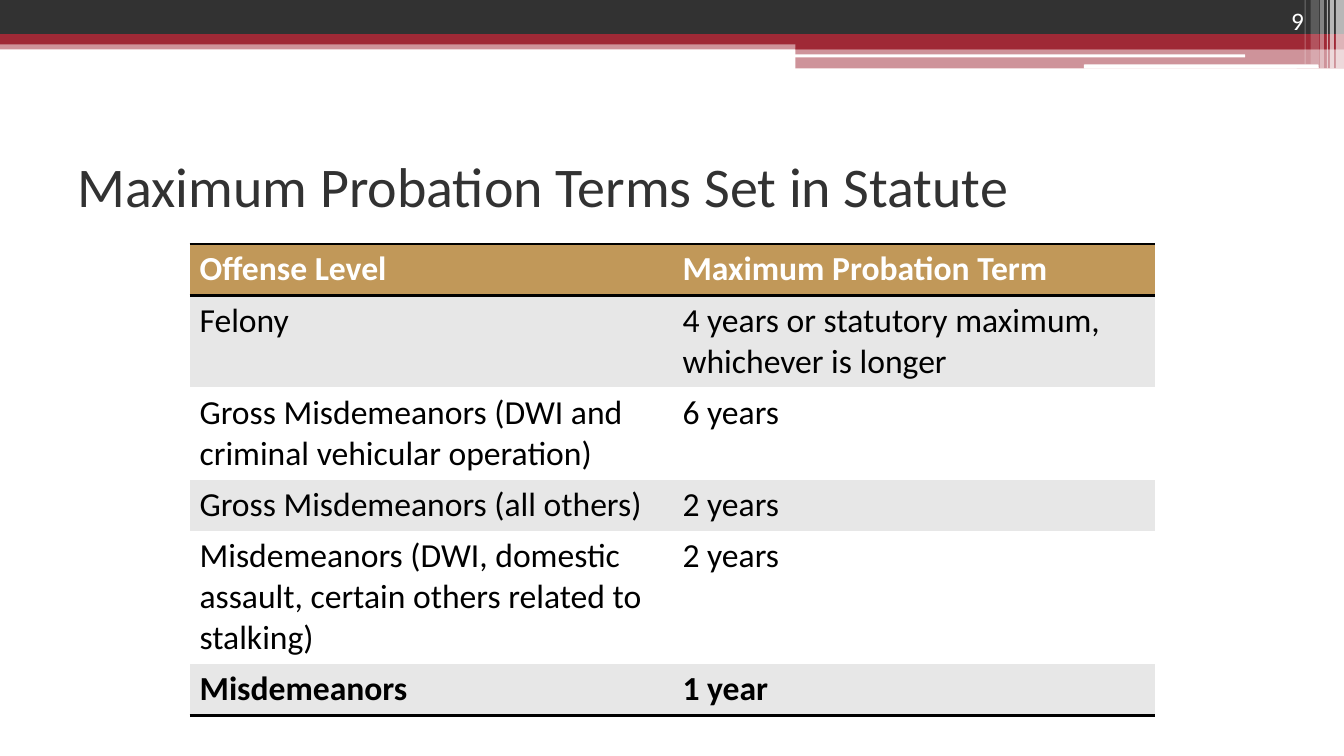
import dataclasses

import lxml.etree
import pptx
import pptx.dml.color
import pptx.enum.shapes
import pptx.enum.text
import pptx.oxml
import pptx.oxml.ns
import pptx.util

Inches = pptx.util.Inches
Pt = pptx.util.Pt
RGBColor = pptx.dml.color.RGBColor
Shape = pptx.enum.shapes.MSO_SHAPE
Anchor = pptx.enum.text.MSO_ANCHOR
qn = pptx.oxml.ns.qn

FONT = "Calibri"
WHITE = RGBColor(0xFF, 0xFF, 0xFF)
BLACK = RGBColor(0x00, 0x00, 0x00)
CHARCOAL = RGBColor(0x32, 0x32, 0x32)
CRIMSON = RGBColor(0x9F, 0x29, 0x36)
TAN = RGBColor(0xC1, 0x98, 0x59)
GRAY = RGBColor(0xE7, 0xE7, 0xE7)
PLAIN_TABLE_STYLE = "{2D5ABB26-0587-4C30-8999-92F81FD0307C}"


@dataclasses.dataclass(frozen=True)
class Band:
    left: float
    top: float
    width: float
    height: float
    color: RGBColor
    opacity: int = 100
    rounded: bool = False


@dataclasses.dataclass(frozen=True)
class TermRow:
    offense: str
    term: str
    height: float
    fill: RGBColor
    color: RGBColor = BLACK
    bold: bool = False
    borders: tuple[str, ...] = ()


BANDS = [
    # Full-width bars
    Band(0, 0.4, 13.33, 0.09, CRIMSON, 50),
    Band(0, 0, 13.33, 0.34, CHARCOAL),
    Band(0, 0.34, 13.33, 0.1, CRIMSON),
    # Stepped bars at the right
    Band(7.89, 0.39, 5.44, 0.1, CRIMSON),
    Band(7.89, 0.48, 5.44, 0.2, CRIMSON, 50),
    Band(7.88, 0.54, 4.47, 0.03, WHITE, rounded=True),
    Band(10.75, 0.64, 2.33, 0.04, WHITE, rounded=True),
    # Translucent vertical stripes
    Band(13.25, 0, 0.08, 0.68, WHITE, 65),
    Band(13.19, 0, 0.04, 0.68, WHITE, 65),
    Band(13.16, 0, 0.01, 0.68, WHITE, 60),
    Band(13.09, 0, 0.04, 0.68, WHITE, 40),
    Band(13, 0, 0.08, 0.64, WHITE, 20),
    Band(12.94, 0, 0.01, 0.64, WHITE, 30),
]

TERM_ROWS = [
    TermRow("Offense Level", "Maximum Probation Term", 0.51, TAN, WHITE, True, ("lnT", "lnB")),
    TermRow("Felony", "4 years or statutory maximum, whichever is longer", 0.91, GRAY),
    TermRow("Gross Misdemeanors (DWI and criminal vehicular operation)", "6 years", 0.91, WHITE),
    TermRow("Gross Misdemeanors (all others)", "2 years", 0.51, GRAY),
    TermRow("Misdemeanors (DWI, domestic assault, certain others related to stalking)",
            "2 years", 1.32, WHITE),
    TermRow("Misdemeanors", "1 year", 0.51, GRAY, bold=True, borders=("lnB",)),
]


def set_font(paragraph, size: float, color: RGBColor, bold: bool = False) -> None:
    paragraph.font.name = FONT
    paragraph.font.size = Pt(size)
    paragraph.font.color.rgb = color
    paragraph.font.bold = bold


def add_band(slide, band: Band) -> None:
    kind = Shape.ROUNDED_RECTANGLE if band.rounded else Shape.RECTANGLE
    shape = slide.shapes.add_shape(kind, Inches(band.left), Inches(band.top),
                                   Inches(band.width), Inches(band.height))
    shape.shadow.inherit = False
    shape.line.fill.background()
    shape.fill.solid()
    shape.fill.fore_color.rgb = band.color
    if band.opacity < 100:
        color = shape._element.spPr.find(qn("a:solidFill")).find(qn("a:srgbClr"))
        alpha = lxml.etree.SubElement(color, qn("a:alpha"))
        alpha.set("val", str(band.opacity * 1000))


def add_title(slide, text: str) -> None:
    title = slide.shapes.title
    title.left, title.top = Inches(0.67), Inches(1.25)
    title.width, title.height = Inches(12), Inches(1.17)
    title.text_frame.text = text
    title.text_frame.vertical_anchor = Anchor.MIDDLE
    paragraph = title.text_frame.paragraphs[0]
    paragraph.alignment = pptx.enum.text.PP_ALIGN.LEFT
    set_font(paragraph, 40, CHARCOAL)


def add_border(cell, side: str) -> None:
    line = pptx.oxml.parse_xml(
        f'<a:{side} {pptx.oxml.ns.nsdecls("a")} w="{Pt(2)}">'
        f'<a:solidFill><a:srgbClr val="{BLACK}"/></a:solidFill></a:{side}>')
    cell._tc.get_or_add_tcPr().insert(0, line)


def add_terms_table(slide, rows: list[TermRow]) -> None:
    height = sum(row.height for row in rows)
    frame = slide.shapes.add_table(len(rows), 2, Inches(1.88), Inches(2.42),
                                   Inches(9.58), Inches(height))
    table = frame.table
    table._tbl.tblPr.find(qn("a:tableStyleId")).text = PLAIN_TABLE_STYLE
    for table_row, row in zip(table.rows, rows):
        table_row.height = Inches(row.height)
        for cell, text in zip(table_row.cells, (row.offense, row.term)):
            cell.text = text
            set_font(cell.text_frame.paragraphs[0], 24, row.color, row.bold)
            cell.fill.solid()
            cell.fill.fore_color.rgb = row.fill
            # Borders precede the fill, top before bottom
            for side in reversed(row.borders):
                add_border(cell, side)


def add_slide_number(slide, number: str) -> None:
    box = slide.shapes.add_textbox(Inches(11.92), 0, Inches(1.11), Inches(0.4))
    box.text_frame.word_wrap = True
    box.text_frame.vertical_anchor = Anchor.BOTTOM
    box.text_frame.text = number
    paragraph = box.text_frame.paragraphs[0]
    paragraph.alignment = pptx.enum.text.PP_ALIGN.RIGHT
    set_font(paragraph, 18, WHITE)


def main() -> None:
    presentation = pptx.Presentation()
    presentation.slide_width = Inches(13.33)
    presentation.slide_height = Inches(7.5)
    slide = presentation.slides.add_slide(presentation.slide_layouts[5])

    # Header decoration
    for band in BANDS:
        add_band(slide, band)

    # Content
    add_title(slide, "Maximum Probation Terms Set in Statute")
    add_terms_table(slide, TERM_ROWS)
    add_slide_number(slide, "9")

    presentation.save("out.pptx")


if __name__ == "__main__":
    main()
